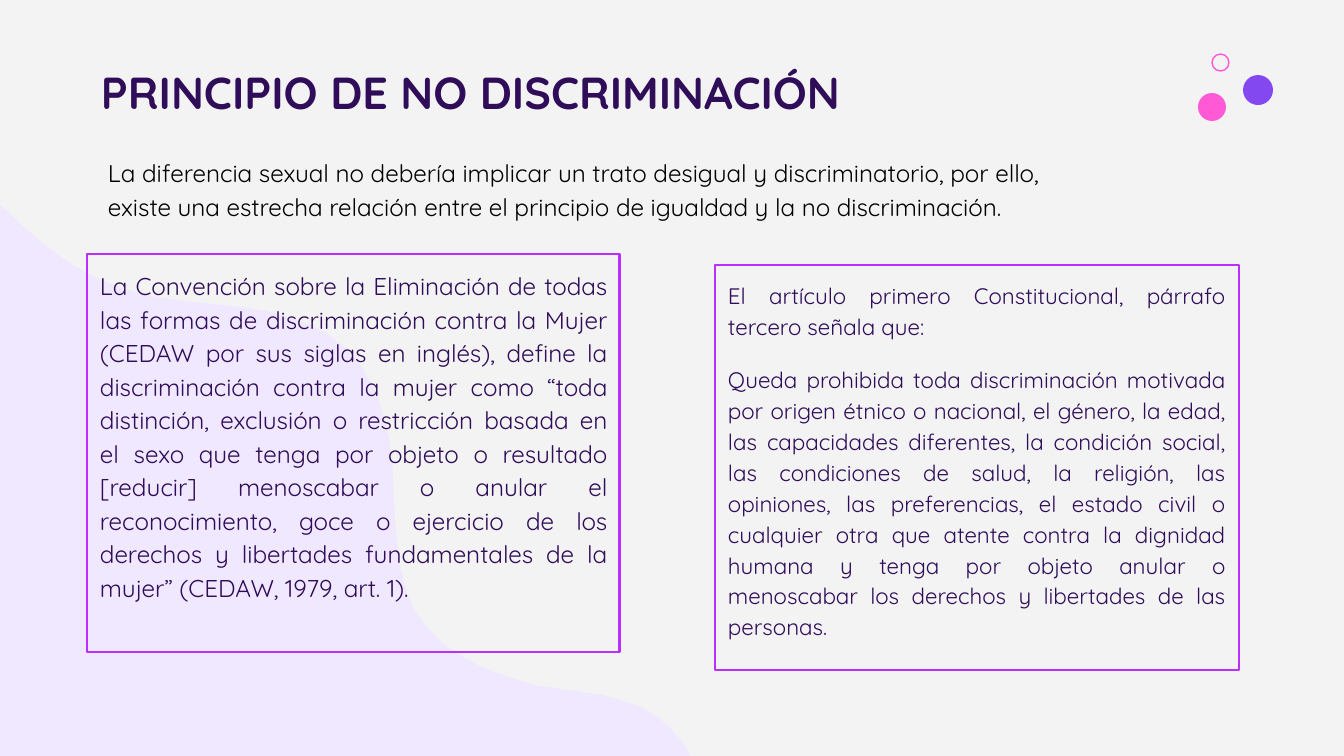
"""Build the slide on the principle of non-discrimination."""
from pptx import Presentation
from pptx.dml.color import RGBColor
from pptx.enum.shapes import MSO_SHAPE
from pptx.enum.text import MSO_ANCHOR, PP_ALIGN
from pptx.util import Emu, Pt

PX = 6804
FONT = "Quicksand"
PURPLE, VIOLET, PINK = "300D59", "BA2EFF", "FF59D6"


def color(target, value):
    if hasattr(target, "solid"):
        target.solid()
        target = target.fore_color
    else:
        target = target.color
    target.rgb = RGBColor.from_string(value)


def write(box, paragraphs, size, ink, spacing=1.0, align=PP_ALIGN.LEFT, before=0, after=0):
    frame = box.text_frame
    frame.word_wrap = True
    frame.vertical_anchor = MSO_ANCHOR.TOP
    frame.margin_left = frame.margin_right = Emu(13 * PX)
    frame.margin_top = frame.margin_bottom = Emu(13 * PX)
    for index, text in enumerate(paragraphs):
        para = frame.add_paragraph() if index else frame.paragraphs[0]
        para.text = text
        para.alignment = align
        para.line_spacing = spacing
        para.space_before, para.space_after = Pt(before), Pt(after)
        para.font.name, para.font.size = FONT, Pt(size)
        color(para.font, ink)


deck = Presentation()
deck.slide_width, deck.slide_height = Emu(1344 * PX), Emu(756 * PX)
page = deck.slides.add_slide(deck.slide_layouts[6])
color(page.background.fill, "F3F3F3")

start = (0, 205)
curves = [
    ((30, 233), (62, 262), (101, 280)),
    ((177, 316), (282, 290), (344, 347)),
    ((374, 374), (386, 414), (391, 453)),
    ((395, 491), (394, 530), (401, 569)),
    ((404, 585), (409, 602), (419, 617)),
    ((429, 631), (444, 645), (460, 655)),
    ((481, 668), (505, 677), (531, 684)),
    ((567, 692), (608, 692), (641, 707)),
    ((662, 717), (681, 736), (690, 756)),
]
steps = 12
outline = []
corner = start
for first, second, end in curves:
    for step in range(1, steps + 1):
        t = step / steps
        outline.append(tuple(
            (1 - t) ** 3 * a + 3 * (1 - t) ** 2 * t * b + 3 * (1 - t) * t ** 2 * c + t ** 3 * d
            for a, b, c, d in zip(corner, first, second, end)
        ))
    corner = end
builder = page.shapes.build_freeform(*start, scale=PX)
builder.add_line_segments(outline + [(0, 756)], close=True)
wave = builder.convert_to_shape()
wave.shadow.inherit = False
color(wave.fill, "F0E8FF")
wave.line.fill.background()

for left, top, size, fill in [(1243, 75, 30, "8348F0"), (1198, 93, 28, PINK), (1212, 54, 17, None)]:
    dot = page.shapes.add_shape(MSO_SHAPE.OVAL, *(Emu(n * PX) for n in (left, top, size, size)))
    dot.shadow.inherit = False
    if fill:
        color(dot.fill, fill)
        dot.line.fill.background()
    else:
        dot.fill.background()
        color(dot.line, PINK)
        dot.line.width = Pt(0.75)

title = page.shapes.add_textbox(*(Emu(n * PX) for n in (88, 52, 989, 96)))
write(title, ["PRINCIPIO DE NO DISCRIMINACIÓN"], 24, PURPLE)
title.text_frame.paragraphs[0].font.bold = True

intro = page.shapes.add_textbox(*(Emu(n * PX) for n in (95, 141, 1013, 90)))
write(intro, [
    "La diferencia sexual no debería implicar un trato desigual y discriminatorio, por ello, "
    "existe una estrecha relación entre el principio de igualdad y la no discriminación."
], 13, "000000", 1.15)

constitution = [
    "El artículo primero Constitucional, párrafo tercero señala que:",
    "Queda prohibida toda discriminación motivada por origen étnico o nacional, el género, "
    "la edad, las capacidades diferentes, la condición social, las condiciones de salud, "
    "la religión, las opiniones, las preferencias, el estado civil o cualquier otra que atente "
    "contra la dignidad humana y tenga por objeto anular o menoscabar los derechos y "
    "libertades de las personas.",
]
convention = [
    "La Convención sobre la Eliminación de todas las formas de discriminación contra la Mujer "
    "(CEDAW por sus siglas en inglés), define la discriminación contra la mujer como “toda "
    "distinción, exclusión o restricción basada en el sexo que tenga por objeto o resultado "
    "[reducir] menoscabar o anular el reconocimiento, goce o ejercicio de los derechos y "
    "libertades fundamentales de la mujer” (CEDAW, 1979, art. 1).",
]
for place, paragraphs, size, after in [
    ((715, 265, 524, 405), constitution, 12, 0),
    ((87, 254, 533, 398), convention, 13, 12),
]:
    card = page.shapes.add_shape(MSO_SHAPE.RECTANGLE, *(Emu(n * PX) for n in place))
    card.shadow.inherit = False
    card.fill.background()
    color(card.line, VIOLET)
    card.line.width = Pt(1.5)
    write(card, paragraphs, size, PURPLE, 1.15, PP_ALIGN.JUSTIFY, 12, after)

deck.save("out.pptx")
